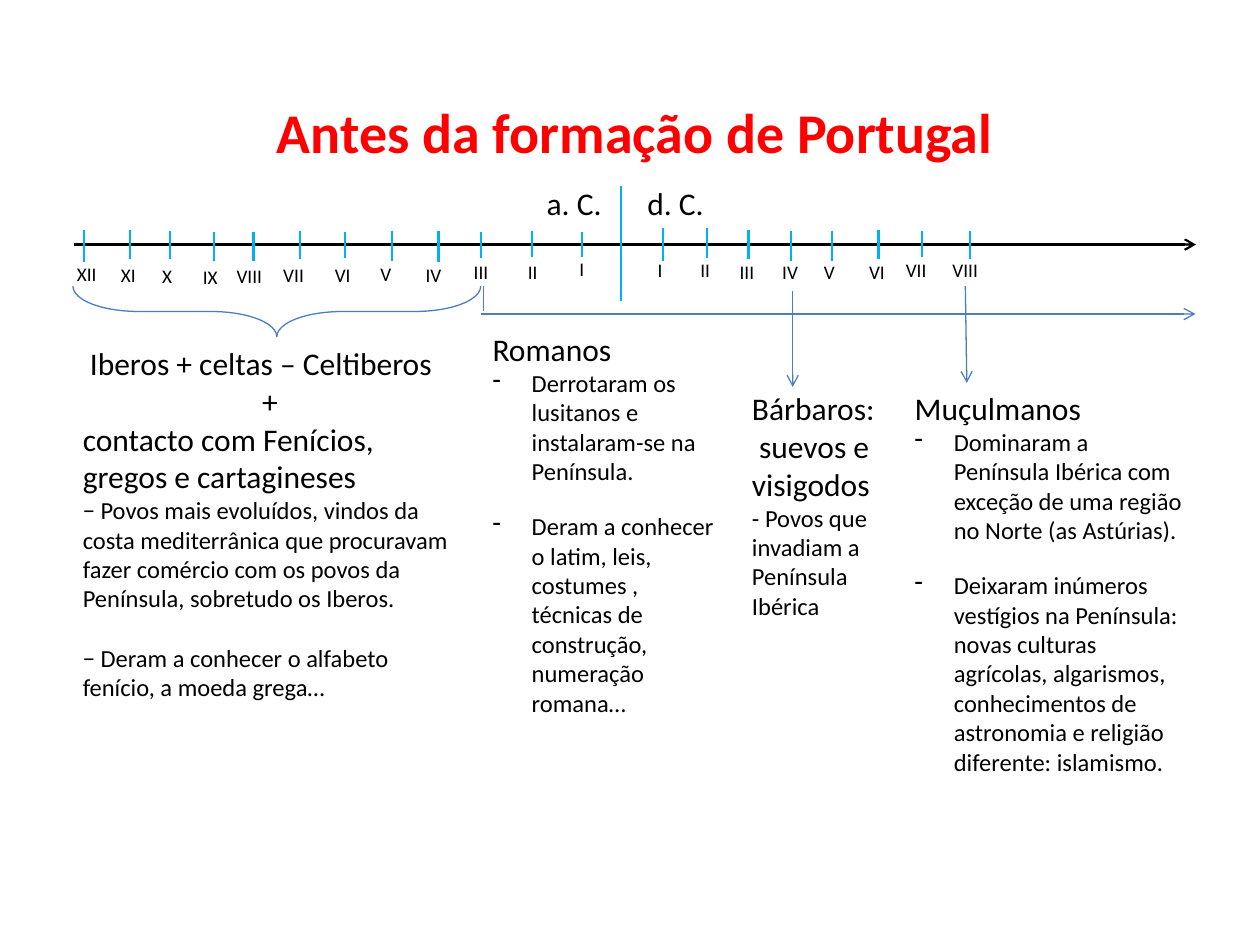
from dataclasses import dataclass

from pptx import Presentation
from pptx.dml.color import RGBColor
from pptx.enum.shapes import MSO_CONNECTOR as Connector, MSO_SHAPE as Preset
from pptx.enum.text import MSO_AUTO_SIZE as AutoSize, PP_ALIGN as Align
from pptx.oxml.xmlchemy import OxmlElement
from pptx.util import Cm, Pt


@dataclass(frozen=True)
class Theme:
    """Colours, font, type sizes and line widths of the slide."""
    font: str = "Calibri"
    ink: str = "000000"
    title: str = "FF0000"
    tick: str = "00B0F0"
    guide: str = "4B7EBC"
    title_size: int = 32
    heading_size: int = 18
    body_size: int = 14
    label_size: int = 11
    axis_width: float = 1.25
    guide_width: float = 0.75


@dataclass(frozen=True)
class Box:
    """A region in centimetres."""
    left: float
    top: float
    width: float
    height: float

    def inner(self, x, y, width, height):
        """Return a box placed relative to this one."""
        return Box(self.left + x, self.top + y, width, height)

    def lengths(self):
        """Return the four sides as slide lengths."""
        return [Cm(value) for value in (self.left, self.top, self.width, self.height)]


THEME = Theme()
BODY = {"size": THEME.body_size}
BULLET = {"size": THEME.body_size, "bullet": "-"}

CENTURIES = [
    ("XII", 0.20, -0.30, 0.36, -0.20, 0.23, 0.91),
    ("XI", 1.12, -0.30, 0.30, 0.69, 0.25, 0.81),
    ("X", 1.93, -0.28, 0.30, 1.52, 0.28, 0.81),
    ("IX", 2.82, -0.25, 0.33, 2.34, 0.30, 1.22),
    ("VIII", 3.61, -0.25, 0.33, 3.02, 0.28, 1.22),
    ("VII", 4.55, -0.28, 0.30, 3.96, 0.25, 1.22),
    ("VI", 5.46, -0.25, 0.28, 5.00, 0.25, 0.91),
    ("V", 6.40, -0.28, 0.33, 5.92, 0.23, 0.91),
    ("IV", 7.34, -0.28, 0.36, 6.83, 0.25, 0.91),
    ("III", 8.20, -0.25, 0.28, 7.80, 0.20, 0.91),
    ("II", 9.22, -0.28, 0.25, 8.89, 0.20, 0.76),
    ("I", 10.24, -0.25, 0.25, 9.93, 0.13, 0.76),
    ("I", 11.86, -0.33, 0.33, 11.51, 0.15, 0.76),
    ("II", 12.75, -0.33, 0.28, 12.37, 0.15, 0.76),
    ("III", 13.59, -0.30, 0.30, 13.16, 0.20, 0.91),
    ("IV", 14.45, -0.28, 0.33, 14.02, 0.20, 0.91),
    ("V", 15.27, -0.28, 0.33, 14.86, 0.20, 0.91),
    ("VI", 16.21, -0.30, 0.30, 15.77, 0.20, 0.91),
    ("VII", 17.09, -0.28, 0.25, 16.51, 0.15, 1.22),
    ("VIII", 18.06, -0.28, 0.30, 17.45, 0.15, 1.22),
]

PEOPLES = [
    (Box(1.42, 6.81, 8.05, 7.52), [
        (" Iberos + celtas – Celtiberos", {}),
        ("+", {"align": Align.CENTER}),
        ("contacto com Fenícios, gregos e cartagineses", {}),
        ("− Povos mais evoluídos, vindos da costa mediterrânica que procuravam "
         "fazer comércio com os povos da Península, sobretudo os Iberos.", BODY),
        ("− Deram a conhecer o alfabeto fenício, a moeda grega…", {**BODY, "before": 17}),
    ]),
    (Box(9.68, 6.53, 5.03, 8.13), [
        ("Romanos", {}),
        ("Derrotaram os lusitanos e instalaram-se na Península.", BULLET),
        ("Deram a conhecer o latim, leis, costumes , técnicas de construção, "
         "numeração romana…", {**BULLET, "before": 14.65}),
    ]),
    (Box(14.91, 7.72, 3.28, 4.95), [
        ("Bárbaros:", {}),
        (" suevos e visigodos", {}),
        ("- Povos que invadiam a Península Ibérica", BODY),
    ]),
    (Box(18.19, 7.72, 5.92, 8.13), [
        ("Muçulmanos", {}),
        ("Dominaram a Península Ibérica com exceção de uma região no Norte "
         "(as Astúrias).", BULLET),
        ("Deixaram inúmeros vestígios na Península: novas culturas agrícolas, "
         "algarismos, conhecimentos de astronomia e religião diferente: islamismo.",
         {**BULLET, "before": 14.65}),
    ]),
]


def write(paragraph, text, size=THEME.heading_size, color=THEME.ink, bold=False,
          align=Align.LEFT, bullet=None, before=0):
    """Fill one paragraph with formatted text."""
    if bullet:
        properties = paragraph._p.get_or_add_pPr()
        properties.set("marL", str(Cm(0.79)))
        properties.set("indent", str(-Cm(0.79)))
        mark = OxmlElement("a:buChar")
        mark.set("char", bullet)
        properties.append(mark)
    paragraph.alignment = align
    if before:
        paragraph.space_before = Pt(before)
    run = paragraph.add_run()
    run.text = text
    run.font.name = THEME.font
    run.font.size = Pt(size)
    run.font.bold = bold
    run.font.color.rgb = RGBColor.from_string(color)


def add_text(shapes, box, paragraphs, wrap=True):
    """Add a text box holding (text, format) paragraphs."""
    frame = shapes.add_textbox(*box.lengths()).text_frame
    frame.word_wrap = wrap
    frame.auto_size = AutoSize.SHAPE_TO_FIT_TEXT
    for index, (text, style) in enumerate(paragraphs):
        paragraph = frame.add_paragraph() if index else frame.paragraphs[0]
        write(paragraph, text, **style)


def add_line(shapes, box, color=THEME.guide, width=THEME.guide_width, arrow=False):
    """Draw a line from the top left to the bottom right of a box."""
    left, top, across, down = box.lengths()
    line = shapes.add_connector(Connector.STRAIGHT, left, top, left + across, top + down)
    line.line.color.rgb = RGBColor.from_string(color)
    line.line.width = Pt(width)
    if arrow:
        tail = OxmlElement("a:tailEnd")
        tail.set("type", "arrow")
        line.line._get_or_add_ln().append(tail)
    line._element.spPr.append(OxmlElement("a:effectLst"))


def draw_title(slide, box):
    """Write the slide title."""
    style = {"size": THEME.title_size, "color": THEME.title, "bold": True, "align": Align.CENTER}
    add_text(slide.shapes, box, [("Antes da formação de Portugal", style)])


def draw_timeline(slide, box):
    """Draw the axis of centuries, with its ticks, numerals and eras."""
    shapes = slide.shapes.add_group_shape().shapes
    add_line(shapes, box, THEME.ink, THEME.axis_width, arrow=True)
    add_line(shapes, box.inner(11.02, -1.19, 0, 2.33), THEME.tick, THEME.axis_width)
    for era, x in (("a. C.", 9.27), ("d. C.", 11.3)):
        add_text(shapes, box.inner(x, -1.35, 1.8, 1.02), [(era, {})], wrap=False)
    for numeral, x, top, bottom, label_x, label_y, width in CENTURIES:
        add_line(shapes, box.inner(x, top, 0, bottom - top), THEME.tick, THEME.axis_width)
        add_text(shapes, box.inner(label_x, label_y, width, 0.74),
                 [(numeral, {"size": THEME.label_size})], wrap=False)


def draw_periods(slide, box):
    """Draw the brace and the arrows that tie the peoples to the timeline."""
    center = box.inner(4.1, 0.51, 0, 0)
    brace = slide.shapes.add_shape(
        Preset.RIGHT_BRACE, *center.inner(-0.51, -4.11, 1.02, 8.22).lengths())
    brace.rotation = 90
    brace.adjustments[0] = 1.3
    brace.adjustments[1] = 0.5
    brace.shadow.inherit = False
    brace.fill.background()
    brace.line.color.rgb = RGBColor.from_string(THEME.guide)
    brace.line.width = Pt(THEME.guide_width)
    add_line(slide.shapes, box.inner(8.27, 0, 0, 0.51))
    add_line(slide.shapes, box.inner(8.22, 0.56, 14.4, 0), arrow=True)
    add_line(slide.shapes, box.inner(14.5, 0.1, 0, 1.93), arrow=True)
    add_line(slide.shapes, box.inner(17.98, 0, 0.03, 1.95), arrow=True)


def draw_peoples(slide):
    """Write the column of each people in its own box."""
    for box, paragraphs in PEOPLES:
        add_text(slide.shapes, box, paragraphs)


def main():
    """Build and save the slide."""
    presentation = Presentation()
    presentation.slide_width, presentation.slide_height = Cm(25.4), Cm(19.05)
    slide = presentation.slides.add_slide(presentation.slide_layouts[6])
    draw_periods(slide, Box(1.48, 5.77, 22.62, 2))
    draw_peoples(slide)
    draw_timeline(slide, Box(1.5, 4.93, 22.61, 0))
    draw_title(slide, Box(3.61, 1.85, 18.39, 1.63))
    presentation.save("out.pptx")


if __name__ == "__main__":
    main()
